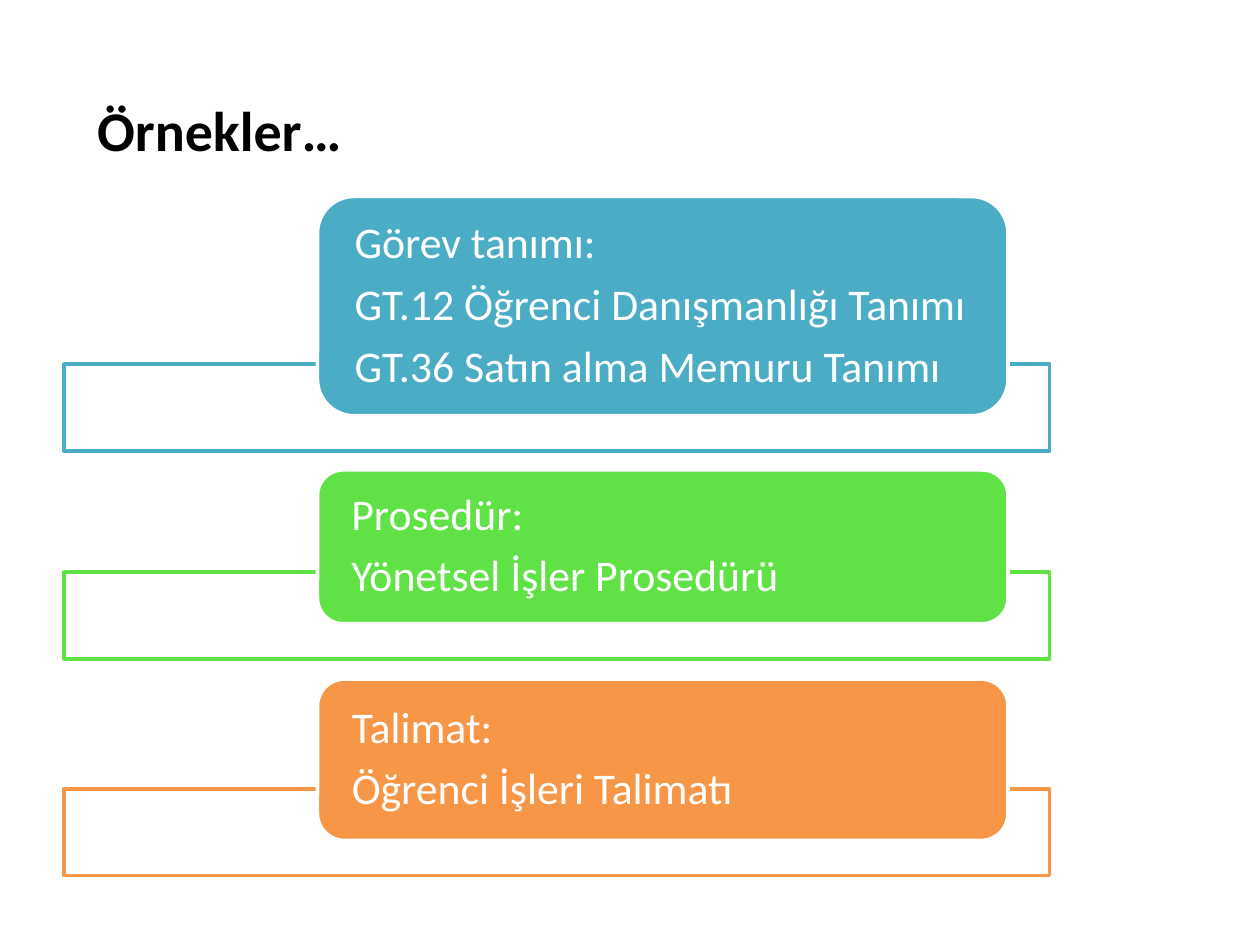
from dataclasses import dataclass

from lxml import etree
from pptx import Presentation
from pptx.dml.color import RGBColor
from pptx.enum.shapes import MSO_SHAPE
from pptx.enum.text import MSO_ANCHOR, MSO_AUTO_SIZE, PP_ALIGN
from pptx.oxml.ns import qn
from pptx.util import Inches, Pt

RECTANGLE = MSO_SHAPE.RECTANGLE
ROUNDED = MSO_SHAPE.ROUNDED_RECTANGLE
LEFT = PP_ALIGN.LEFT
TOP, MIDDLE = MSO_ANCHOR.TOP, MSO_ANCHOR.MIDDLE
GROW = MSO_AUTO_SIZE.SHAPE_TO_FIT_TEXT
TITLE_ONLY = 5


@dataclass(frozen=True)
class Theme:
    font: str = "Calibri"
    title_size: int = 32
    body_size: int = 25
    line_width: int = 2
    black: str = "000000"
    white: str = "FFFFFF"
    blue: str = "4BACC6"
    green: str = "60E146"
    orange: str = "F79646"


THEME = Theme()
FRAME_LEFT, FRAME_WIDTH, FRAME_HEIGHT = 0.51, 7.82, 0.69
LABEL_LEFT, LABEL_WIDTH = 2.52, 5.48
LABEL_OVERLAP = 0.41

EXAMPLES = [
    (2.89, 1.74, THEME.blue,
     ["Görev tanımı:", "GT.12 Öğrenci Danışmanlığı Tanımı", "GT.36 Satın alma Memuru Tanımı"]),
    (4.54, 1.22, THEME.green, ["Prosedür:", "Yönetsel İşler Prosedürü"]),
    (6.26, 1.28, THEME.orange, ["Talimat:", "Öğrenci İşleri Talimatı"]),
]


def format_text(text_frame, size, color, line_spacing, space_after=0, bold=False):
    for paragraph in text_frame.paragraphs:
        paragraph.alignment = LEFT
        paragraph.line_spacing = line_spacing
        paragraph.space_after = Pt(space_after)
        for run in paragraph.runs:
            run.font.name = THEME.font
            run.font.size = Pt(size)
            run.font.bold = bold
            run.font.color.rgb = RGBColor.from_string(color)


def add_box(slide, kind, bounds, fill, line):
    shape = slide.shapes.add_shape(kind, *map(Inches, bounds))
    shape.shadow.inherit = False
    shape.fill.solid()
    shape.fill.fore_color.rgb = RGBColor.from_string(fill)
    shape.line.color.rgb = RGBColor.from_string(line)
    shape.line.width = Pt(THEME.line_width)
    return shape


def set_opacity(shape, percent):
    color = shape.fill._xPr.find(qn("a:solidFill"))[0]
    etree.SubElement(color, qn("a:alpha")).set("val", str(percent * 1000))


def add_example(slide, frame_top, label_height, color, lines):
    frame = add_box(slide, RECTANGLE, (FRAME_LEFT, frame_top, FRAME_WIDTH, FRAME_HEIGHT),
                    THEME.white, color)
    set_opacity(frame, 90)
    label_top = frame_top + LABEL_OVERLAP - label_height
    label = add_box(slide, ROUNDED, (LABEL_LEFT, label_top, LABEL_WIDTH, label_height),
                    color, THEME.white)
    text_frame = label.text_frame
    text_frame.word_wrap = True
    text_frame.vertical_anchor = MIDDLE
    text_frame.margin_left = text_frame.margin_right = Inches(0.21)
    text_frame.margin_top = text_frame.margin_bottom = 0
    text_frame.text = "\n".join(lines)
    format_text(text_frame, THEME.body_size, THEME.white, 0.9, space_after=8.3)


def set_title(slide, text):
    title = slide.shapes.title
    title.left, title.top = Inches(0.67), Inches(0.44)
    title.width, title.height = Inches(4.65), Inches(0.83)
    text_frame = title.text_frame
    text_frame.text = text
    text_frame.word_wrap = True
    text_frame.auto_size = GROW
    text_frame.vertical_anchor = TOP
    format_text(text_frame, THEME.title_size, THEME.black, 1.5, bold=True)


def main():
    presentation = Presentation()
    presentation.slide_width, presentation.slide_height = Inches(10), Inches(7.5)
    slide = presentation.slides.add_slide(presentation.slide_layouts[TITLE_ONLY])
    set_title(slide, "Örnekler…")
    for example in EXAMPLES:
        add_example(slide, *example)
    presentation.save("out.pptx")


if __name__ == "__main__":
    main()
